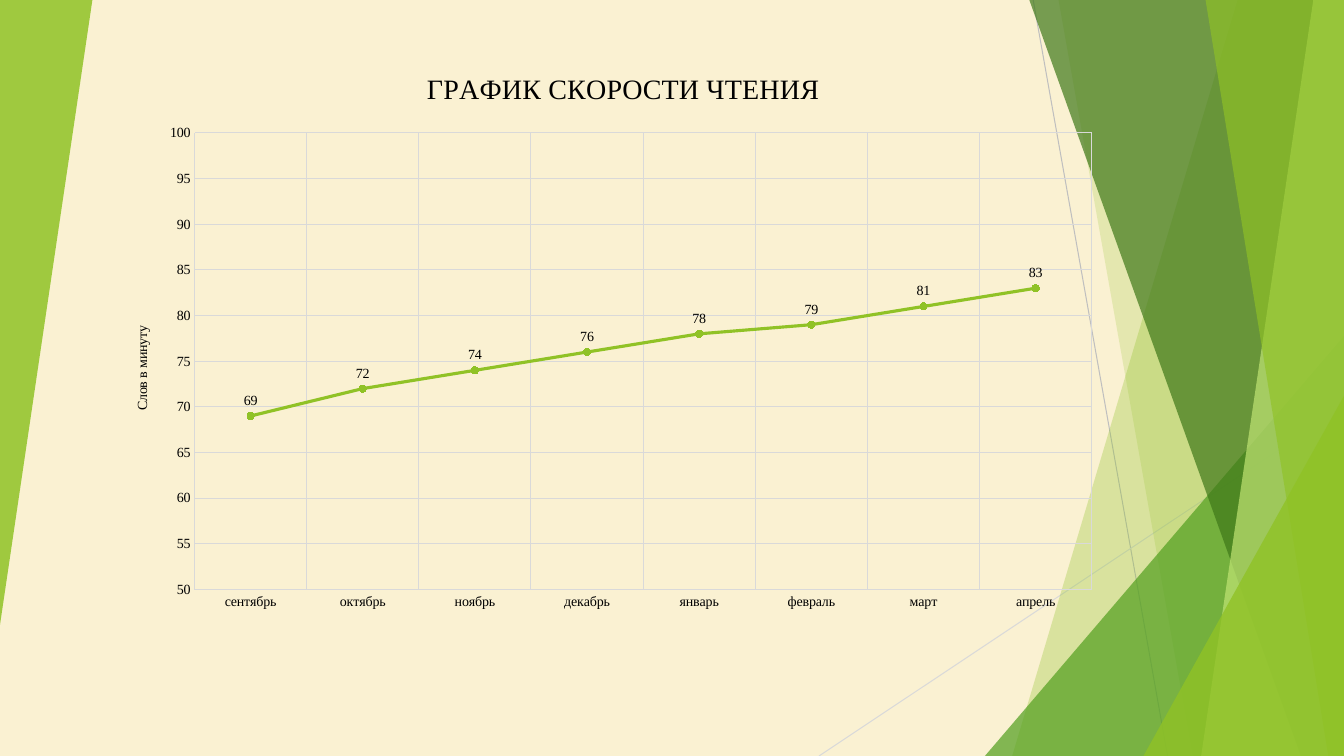
"""Build a slide with a reading speed line chart between green facets."""
from lxml import etree
from pptx import Presentation
from pptx.chart.data import CategoryChartData
from pptx.dml.color import RGBColor
from pptx.enum.chart import XL_CHART_TYPE, XL_LABEL_POSITION, XL_MARKER_STYLE, XL_TICK_MARK
from pptx.enum.shapes import MSO_CONNECTOR, MSO_SHAPE
from pptx.oxml.ns import qn
from pptx.util import Pt

PX = 9525
WIDTH, HEIGHT = 1280, 720
LINE_MARKERS = XL_CHART_TYPE.LINE_MARKERS
ABOVE = XL_LABEL_POSITION.ABOVE
CIRCLE = XL_MARKER_STYLE.CIRCLE
NO_TICK = XL_TICK_MARK.NONE
STRAIGHT = MSO_CONNECTOR.STRAIGHT
TRIANGLE = MSO_SHAPE.ISOSCELES_TRIANGLE
SERIF = "Times New Roman"
BLACK, LIME, GRID = "000000", "90C226", "D9D9D9"


def color(hex_string):
    return RGBColor.from_string(hex_string)


def place(element, index, **fractions):
    for old in element.findall(qn("c:layout")):
        element.remove(old)
    layout = etree.Element(qn("c:layout"))
    manual = etree.SubElement(layout, qn("c:manualLayout"))
    if "w" in fractions:
        etree.SubElement(manual, qn("c:layoutTarget"), val="inner")
    for mode in ("xMode", "yMode"):
        etree.SubElement(manual, qn("c:" + mode), val="edge")
    for side, fraction in fractions.items():
        etree.SubElement(manual, qn("c:" + side), val=str(fraction))
    element.insert(index, layout)


prs = Presentation()
prs.slide_width, prs.slide_height = WIDTH * PX, HEIGHT * PX
slide = prs.slides.add_slide(prs.slide_layouts[6])
slide.background.fill.solid()
slide.background.fill.fore_color.rgb = color("FAF1D2")

for x1, y1, x2, y2, stroke in [(984, 0, 1112, 720, "BFBFBF"), (1280, 387, 780, 720, GRID)]:
    ray = slide.shapes.add_connector(STRAIGHT, x1 * PX, y1 * PX, x2 * PX, y2 * PX)
    ray.line.color.rgb = color(stroke)
    ray.line.width = Pt(0.75)
    etree.SubElement(ray._element.spPr, qn("a:effectLst"))

# Two numbers: top and bottom x of a band; four: box of a triangle.
facets = [
    ((1179, 964), LIME, 30, 0),
    ((1008, 1136), LIME, 20, 0),
    ((938, 320, 342, 400), "54A021", 72, 0),
    ((980, 1239), "3F7819", 70, 0),
    ((1251, 1144), "C0E474", 70, 0),
    ((1148, 1265), LIME, 65, 0),
    ((1089, 377, 191, 343), LIME, 80, 0),
    ((0, 0, 88, 595), LIME, 85, 180),
]
for geometry, tint, opacity, rotation in facets:
    if len(geometry) == 2:
        top_x, bottom_x = geometry
        outline = slide.shapes.build_freeform(top_x, -1, scale=PX)
        outline.add_line_segments([(WIDTH, -1), (WIDTH, HEIGHT), (bottom_x, HEIGHT)])
        facet = outline.convert_to_shape()
    else:
        facet = slide.shapes.add_shape(TRIANGLE, *[length * PX for length in geometry])
        facet.adjustments[0] = 1
        facet.rotation = rotation
    facet.shadow.inherit = False
    facet.line.fill.background()
    facet.fill.solid()
    facet.fill.fore_color.rgb = color(tint)
    tint_xml = facet._element.spPr.find(".//" + qn("a:srgbClr"))
    etree.SubElement(tint_xml, qn("a:alpha"), val=str(opacity * 1000))

reading = CategoryChartData()
reading.categories = ["сентябрь", "октябрь", "ноябрь", "декабрь",
                      "январь", "февраль", "март", "апрель"]
reading.add_series("Series 1", [69, 72, 74, 76, 78, 79, 81, 83])
chart = slide.shapes.add_chart(LINE_MARKERS, 101 * PX, 46 * PX, 958 * PX, 545 * PX, reading).chart
chart.has_legend = False
chart.font.name = "Roboto"
chart.font.size = Pt(10)
chart.font.color.rgb = color(BLACK)
place(chart._chartSpace.chart.plotArea, 0, x=0.088, y=0.148, w=0.892, h=0.798)

months, speed = chart.category_axis, chart.value_axis
chart.has_title = speed.has_title = True
titles = [
    (chart.chart_title, "ГРАФИК СКОРОСТИ ЧТЕНИЯ", 20, 0, 0.314, 0.03),
    (speed.axis_title, "Слов в минуту", 10, -90, 0.024, 0.48),
]
for title, wording, size, angle, x, y in titles:
    title.text_frame.text = wording
    title.text_frame._txBody.bodyPr.set("rot", str(angle * 60000))
    font = title.text_frame.paragraphs[0].font
    font.name, font.size, font.bold = SERIF, Pt(size), False
    font.color.rgb = color(BLACK)
    place(title._element, 1, x=x, y=y)

speed.minimum_scale, speed.maximum_scale, speed.major_unit = 50, 100, 5
for axis in (months, speed):
    axis.has_major_gridlines = True
    axis.major_tick_mark = axis.minor_tick_mark = NO_TICK
    for rule in (axis.major_gridlines.format.line, axis.format.line):
        rule.color.rgb = color(GRID)
        rule.width = Pt(0.75)
speed.format.line.fill.background()

plot = chart.plots[0]
plot.vary_by_categories = False
pace = plot.series[0]
pace.smooth = False
pace.format.line.color.rgb = color(LIME)
pace.format.line.width = Pt(2.25)
pace.marker.style = CIRCLE
pace.marker.size = 5
pace.marker.format.fill.solid()
pace.marker.format.fill.fore_color.rgb = color(LIME)
pace.marker.format.line.color.rgb = color(LIME)
values = pace.data_labels
values.show_value = True
values.position = ABOVE
for font in (months.tick_labels.font, speed.tick_labels.font, values.font):
    font.name, font.size = SERIF, Pt(10)
    font.color.rgb = color(BLACK)

prs.save("out.pptx")
